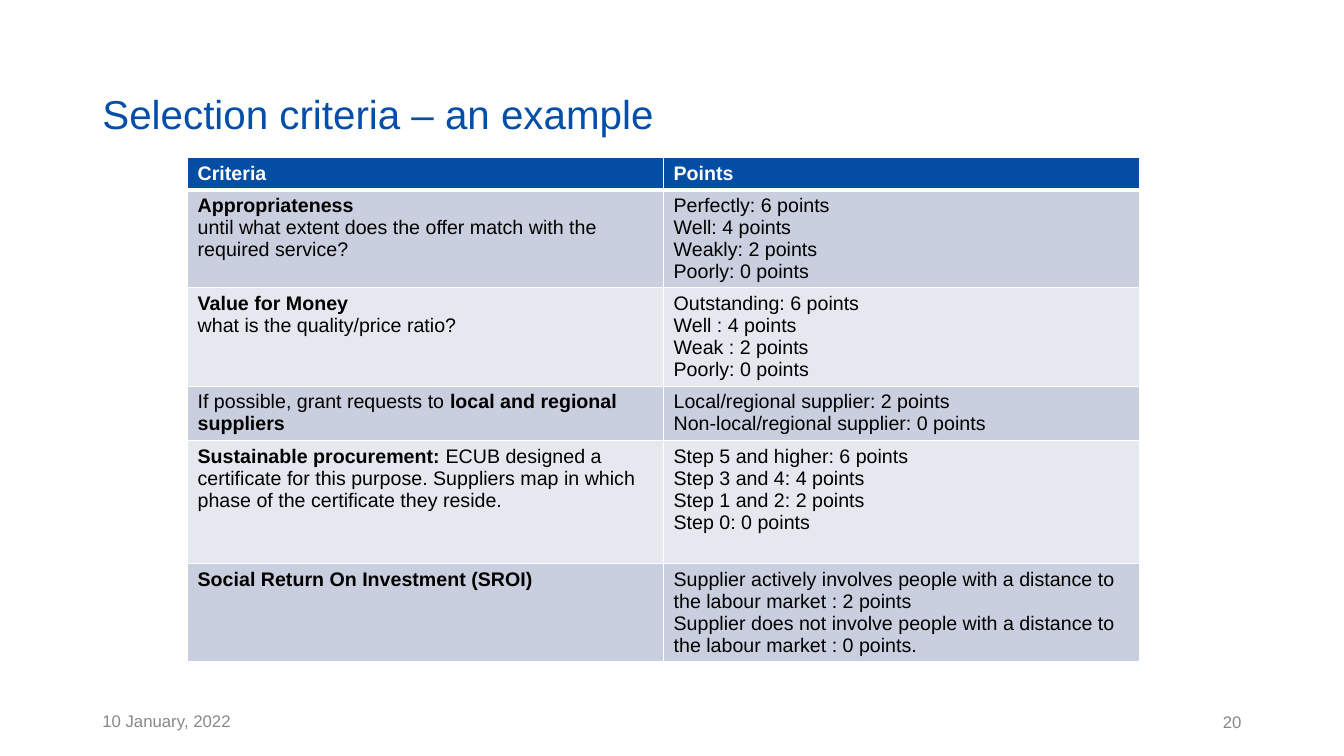
from lxml.etree import SubElement as Sub
from pptx import Presentation
from pptx.dml.color import RGBColor as Color
from pptx.enum.text import MSO_ANCHOR as Anchor, MSO_AUTO_SIZE as Auto, PP_ALIGN as Align
from pptx.oxml.ns import qn
from pptx.util import Pt

BLUE, WHITE, BLACK, GREY = "034EA8", "FFFFFF", "000000", "888888"
HEAD, BANDS = "034EA2", ("CACFDF", "E6E8F0")

ROWS = [
    ("*Criteria*", "*Points*"),
    ("*Appropriateness*\nuntil what extent does the offer match with the required service?",
     "Perfectly: 6 points\nWell: 4 points\nWeakly: 2 points\nPoorly: 0 points"),
    ("*Value for Money*\nwhat is the quality/price ratio?",
     "Outstanding: 6 points\nWell : 4 points\nWeak : 2 points\nPoorly: 0 points"),
    ("If possible, grant requests to *local and regional suppliers*",
     "Local/regional supplier: 2 points\nNon-local/regional supplier: 0 points"),
    ("*Sustainable procurement:* ECUB designed a certificate for this purpose. "
     "Suppliers map in which phase of the certificate they reside.",
     "Step 5 and higher: 6 points\nStep 3 and 4: 4 points\nStep 1 and 2: 2 points\nStep 0: 0 points"),
    ("*Social Return On Investment (SROI)*",
     "Supplier actively involves people with a distance to the labour market : 2 points\n"
     "Supplier does not involve people with a distance to the labour market : 0 points."),
]
HEIGHTS = (22.9, 70.1, 70.1, 38.6, 88, 70.1)


def tint(code):
    return Color.from_string(code)


class Page:
    font = "Arial"

    def __init__(self, deck):
        self.slide = deck.slides.add_slide(deck.slide_layouts[5])

    def style(self, run, size, color, bold=False):
        run.font.name = self.font
        run.font.size = Pt(size)
        run.font.bold = bold
        run.font.color.rgb = tint(color)

    def fill_text(self, shape, text, size, color, align):
        frame = shape.text_frame
        frame.text = text
        frame.word_wrap = True
        frame.auto_size = Auto.NONE
        frame.vertical_anchor = Anchor.MIDDLE
        para = frame.paragraphs[0]
        para.alignment = align
        self.style(para.runs[0], size, color)

    def title(self, text, left, top, width, height):
        shape = self.slide.shapes.title
        shape.left, shape.top = Pt(left), Pt(top)
        shape.width, shape.height = Pt(width), Pt(height)
        self.fill_text(shape, text, 28.8, BLUE, Align.LEFT)

    def label(self, text, left, top, width, height, align=Align.LEFT):
        box = self.slide.shapes.add_textbox(Pt(left), Pt(top), Pt(width), Pt(height))
        self.fill_text(box, text, 12, GREY, align)

    def edge(self, cell, sides):
        props = cell._tc.get_or_add_tcPr()
        for spot, (side, width) in enumerate(sides.items()):
            line = Sub(props, qn(f"a:ln{side}"), w=str(Pt(width)))
            solid = Sub(line, qn("a:solidFill"))
            Sub(solid, qn("a:srgbClr"), val=WHITE)
            props.insert(spot, line)

    def cell(self, cell, text, fill, color):
        cell.fill.solid()
        cell.fill.fore_color.rgb = tint(fill)
        frame = cell.text_frame
        frame.text = text.replace("*", "")
        for para, line in zip(frame.paragraphs, text.split("\n")):
            para.text = ""
            for spot, part in enumerate(line.split("*")):
                if part:
                    run = para.add_run()
                    run.text = part
                    self.style(run, 14, color, spot % 2 == 1)

    def table(self, rows, heights, left, top, width):
        grid = self.slide.shapes.add_table(
            len(rows), len(rows[0]), Pt(left), Pt(top), Pt(width), Pt(sum(heights))).table
        for r, (row, height) in enumerate(zip(rows, heights)):
            grid.rows[r].height = Pt(height)
            fill, color = (BANDS[(r - 1) % 2], BLACK) if r else (HEAD, WHITE)
            for c, text in enumerate(row):
                cell = grid.cell(r, c)
                self.cell(cell, text, fill, color)
                self.edge(cell, {"L": 1, "R": 1, "T": 3 if r == 1 else 1, "B": 1 if r else 3})


def main():
    deck = Presentation()
    deck.slide_width, deck.slide_height = Pt(960), Pt(540)
    page = Page(deck)
    page.title("Selection criteria – an example", 66, 58.5, 828, 45)
    page.label("10 January, 2022", 66, 500.5, 216, 28.8)
    page.label("20", 678, 501, 216, 28.8, Align.RIGHT)
    page.table(ROWS, HEIGHTS, 134, 112.5, 680)
    deck.save("out.pptx")


if __name__ == "__main__":
    main()
